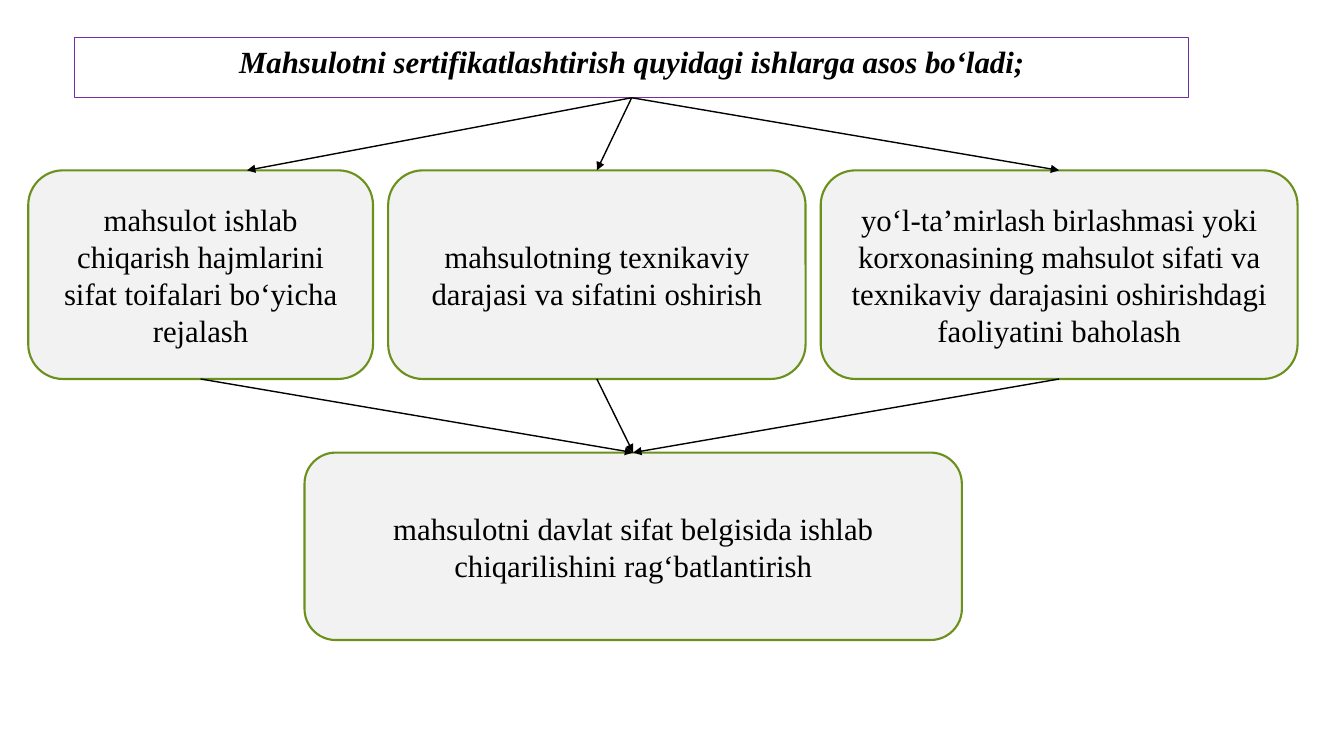
import pptx
import pptx.dml.color
import pptx.enum.shapes
import pptx.enum.text
import pptx.oxml.ns
import pptx.util
from lxml import etree

PX = 9144
TOP, BOTTOM = 0, 2
COLORS = {
    "white": "FFFFFF",
    "black": "000000",
    "purple": "7030A0",
    "gray": "F2F2F2",
    "green": "6B901C",
}
SHAPES = pptx.enum.shapes.MSO_SHAPE
ANCHORS = pptx.enum.text.MSO_ANCHOR


class DiagramSlide:
    """Draws styled boxes and arrows on one slide, measured in px."""

    font_name = "Times New Roman"
    font_size = 22

    def __init__(self, slide):
        self.slide = slide

    def color(self, name):
        return pptx.dml.color.RGBColor.from_string(COLORS[name])

    def box(self, kind, bounds, text, fill, line, width, anchor, emphasis=False):
        shape = self.slide.shapes.add_shape(kind, *(value * PX for value in bounds))
        shape.shadow.inherit = False
        shape.fill.solid()
        shape.fill.fore_color.rgb = self.color(fill)
        shape.line.color.rgb = self.color(line)
        shape.line.width = pptx.util.Pt(width)
        frame = shape.text_frame
        frame.word_wrap = True
        frame.vertical_anchor = anchor
        frame.text = text
        paragraph = frame.paragraphs[0]
        paragraph.alignment = pptx.enum.text.PP_ALIGN.CENTER
        font = paragraph.runs[0].font
        font.name = self.font_name
        font.size = pptx.util.Pt(self.font_size)
        font.bold = font.italic = emphasis
        font.color.rgb = self.color("black")
        return shape

    def heading(self, bounds, text):
        return self.box(SHAPES.RECTANGLE, bounds, text, "white", "purple", 0.75,
                        ANCHORS.TOP, emphasis=True)

    def card(self, bounds, text):
        return self.box(SHAPES.ROUNDED_RECTANGLE, bounds, text, "gray", "green", 1.5,
                        ANCHORS.MIDDLE)

    def arrow(self, source, target, end_x=None):
        connector = self.slide.shapes.add_connector(
            pptx.enum.shapes.MSO_CONNECTOR.STRAIGHT, 0, 0, 0, 0)
        connector.begin_connect(source, BOTTOM)
        if end_x is None:
            connector.end_connect(target, TOP)
        else:
            connector.end_x, connector.end_y = end_x * PX, target.top
        connector.line.color.rgb = self.color("black")
        connector.line.width = pptx.util.Pt(1)
        qn = pptx.oxml.ns.qn
        etree.SubElement(connector.line._get_or_add_ln(), qn("a:tailEnd"), type="triangle")
        etree.SubElement(connector._element.spPr, qn("a:effectLst"))


def main():
    presentation = pptx.Presentation()
    presentation.slide_width = 1333 * PX
    presentation.slide_height = 750 * PX
    slide = presentation.slides.add_slide(presentation.slide_layouts[6])
    diagram = DiagramSlide(slide)

    heading = diagram.heading(
        (74, 37, 1105, 60),
        "Mahsulotni sertifikatlashtirish quyidagi ishlarga asos bo‘ladi;")
    tasks = [
        (342, "mahsulot ishlab chiqarish hajmlarini sifat toifalari bo‘yicha rejalash"),
        (414, "mahsulotning texnikaviy darajasi va sifatini oshirish"),
        (473, "yo‘l-taʼmirlash birlashmasi yoki korxonasining mahsulot sifati va "
              "texnikaviy darajasini oshirishdagi faoliyatini baholash"),
    ]
    left, gap = 28, 15
    cards = []
    for width, text in tasks:
        cards.append(diagram.card((left, 169, width, 207), text))
        left += width + gap
    result = diagram.card(
        (302, 449, 652, 186),
        "mahsulotni davlat sifat belgisida ishlab chiqarilishini rag‘batlantirish")

    for card, end_x in zip(cards, (245, None, None)):
        diagram.arrow(heading, card, end_x)
        diagram.arrow(card, result)

    presentation.save("out.pptx")


if __name__ == "__main__":
    main()
